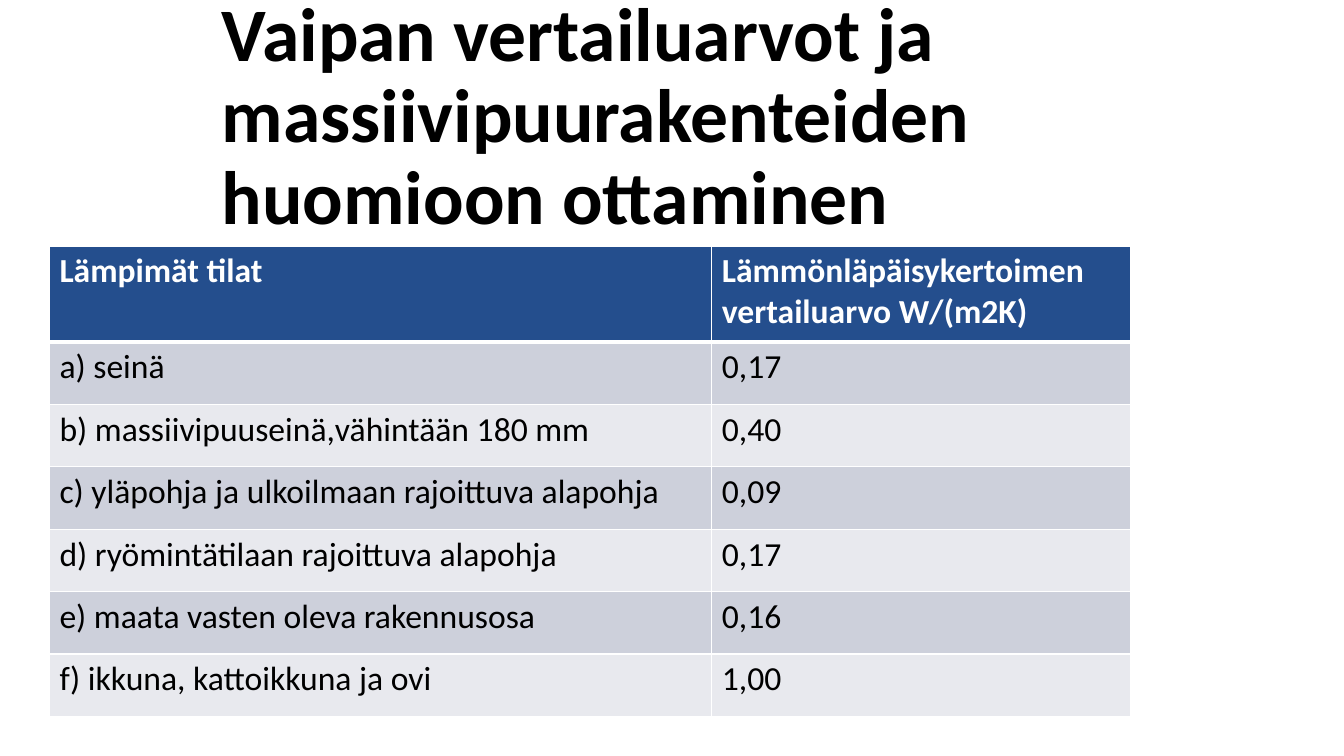
from pptx import Presentation
from pptx.dml.color import RGBColor
from pptx.enum.text import MSO_ANCHOR, MSO_AUTO_SIZE, PP_ALIGN
from pptx.oxml import parse_xml
from pptx.oxml.ns import nsdecls
from pptx.util import Inches, Pt

BLACK, WHITE = "000000", "FFFFFF"
HEADER_BLUE, DARK_BAND, LIGHT_BAND = "244E8D", "CDD0DB", "E8E9EE"

U_VALUES = [
    ("Lämpimät tilat", "Lämmönläpäisykertoimen vertailuarvo W/(m2K)"),
    ("a) seinä", "0,17"),
    ("b) massiivipuuseinä,vähintään 180 mm", "0,40"),
    ("c) yläpohja ja ulkoilmaan rajoittuva alapohja", "0,09"),
    ("d) ryömintätilaan rajoittuva alapohja", "0,17"),
    ("e) maata vasten oleva rakennusosa", "0,16"),
    ("f) ikkuna, kattoikkuna ja ovi", "1,00"),
]


def format_font(font, size, color, bold):
    settings = {"name": "Calibri", "size": Pt(size), "bold": bold}
    for attribute, value in settings.items():
        setattr(font, attribute, value)
    font.color.rgb = RGBColor.from_string(color)


def add_border(cell, side, width):
    """Draw a white line on one side (L, R, T or B); call before filling the cell."""
    cell._tc.get_or_add_tcPr().append(parse_xml(
        f'<a:ln{side} {nsdecls("a")} w="{Pt(width)}"><a:solidFill>'
        f'<a:srgbClr val="{WHITE}"/></a:solidFill></a:ln{side}>'))


presentation = Presentation()
presentation.slide_width = Inches(13.33)
presentation.slide_height = Inches(7.5)
slide = presentation.slides.add_slide(presentation.slide_layouts[5])

heading = slide.shapes.title
heading.left, heading.top = Inches(2.1), Inches(0)
heading.width, heading.height = Inches(10.46), Inches(2.35)
heading.text_frame.auto_size = MSO_AUTO_SIZE.NONE
heading.text_frame.vertical_anchor = MSO_ANCHOR.MIDDLE
heading.text_frame.text = "Vaipan vertailuarvot ja massiivipuurakenteiden huomioon ottaminen"
heading_line = heading.text_frame.paragraphs[0]
heading_line.alignment = PP_ALIGN.LEFT
heading_line.line_spacing = 0.9
format_font(heading_line.runs[0].font, 54, BLACK, True)

u_value_table = slide.shapes.add_table(
    len(U_VALUES), 2, Inches(0.49), Inches(2.44), Inches(10.72), Inches(4.67)).table
for column, width in zip(u_value_table.columns, (6.57, 4.15)):
    column.width = Inches(width)

for row_index, values in enumerate(U_VALUES):
    is_header = row_index == 0
    u_value_table.rows[row_index].height = Inches(0.95 if is_header else 0.62)
    if is_header:
        band = HEADER_BLUE
    else:
        band = DARK_BAND if row_index % 2 else LIGHT_BAND
    for column_index, value in enumerate(values):
        cell = u_value_table.cell(row_index, column_index)
        cell.text = value
        format_font(cell.text_frame.paragraphs[0].runs[0].font, 24,
                    WHITE if is_header else BLACK, is_header)
        for side in "LRTB":
            below_header = (is_header and side == "B") or (row_index == 1 and side == "T")
            add_border(cell, side, 3 if below_header else 1)
        cell.fill.solid()
        cell.fill.fore_color.rgb = RGBColor.from_string(band)

presentation.save("out.pptx")
